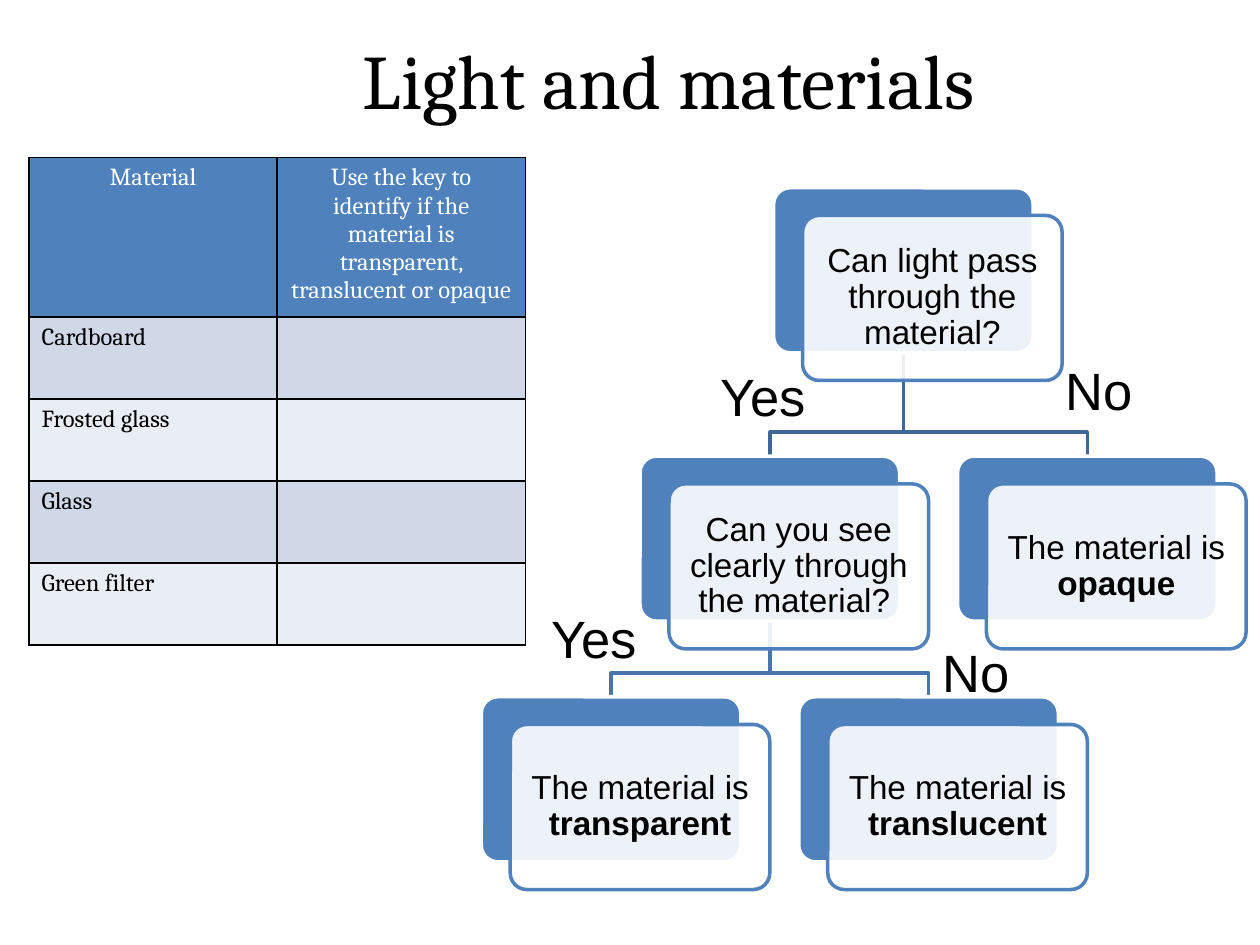
from dataclasses import dataclass

from lxml import etree
from pptx import Presentation
from pptx.dml.color import RGBColor
from pptx.enum.shapes import MSO_SHAPE
from pptx.enum.text import MSO_ANCHOR, PP_ALIGN
from pptx.oxml.ns import qn
from pptx.util import Emu, Pt

PX = 9144  # EMU in one px, 100 px to the inch

ROUNDED = MSO_SHAPE.ROUNDED_RECTANGLE
MIDDLE, TOP = MSO_ANCHOR.MIDDLE, MSO_ANCHOR.TOP
CENTER, LEFT = PP_ALIGN.CENTER, PP_ALIGN.LEFT

BLACK = RGBColor(0x00, 0x00, 0x00)
WHITE = RGBColor(0xFF, 0xFF, 0xFF)
BLUE = RGBColor(0x4F, 0x81, 0xBD)
UPPER_LINK = RGBColor(0x3F, 0x67, 0x97)
LOWER_LINK = RGBColor(0x48, 0x75, 0xAC)
DARK_BAND = RGBColor(0xD0, 0xD8, 0xE8)
LIGHT_BAND = RGBColor(0xE9, 0xED, 0xF4)

NODE_WIDTH, NODE_HEIGHT = 206, 131
CARD_DX, CARD_DY = 23, 22
CARD_PADDING = 4
BEND_RISE = 19  # height of a link's bend above the lower node


@dataclass(frozen=True)
class Node:
    left: int
    top: int
    text: str
    bold: str = ""


@dataclass(frozen=True)
class Link:
    parent: Node
    child: Node
    color: RGBColor


@dataclass(frozen=True)
class Answer:
    left: int
    top: int
    text: str


PASS = Node(614, 149, "Can light pass through the material?")
CLEAR = Node(508, 362, "Can you see clearly through the material? ")
TRANSPARENT = Node(382, 553, "The material is ", "transparent")
TRANSLUCENT = Node(634, 553, "The material is ", "translucent")
OPAQUE = Node(760, 362, "The material is ", "opaque")
NODES = [PASS, CLEAR, TRANSPARENT, TRANSLUCENT, OPAQUE]

LINKS = [
    Link(PASS, OPAQUE, UPPER_LINK),
    Link(CLEAR, TRANSLUCENT, LOWER_LINK),
    Link(CLEAR, TRANSPARENT, LOWER_LINK),
    Link(PASS, CLEAR, UPPER_LINK),
]
ANSWERS = [
    Answer(562, 284, "Yes"),
    Answer(836, 279, "No"),
    Answer(428, 476, "Yes"),
    Answer(738, 503, "No"),
]

HEADINGS = [
    "Material",
    "Use the key to identify if the material is transparent, translucent or opaque",
]
MATERIALS = ["Cardboard", "Frosted glass", "Glass", "Green filter"]


def px(*lengths: int) -> list[Emu]:
    return [Emu(length * PX) for length in lengths]


def add_run(para, text: str, font: str, size: int, color=BLACK, bold=False) -> None:
    span = para.add_run()
    span.text = text
    span.font.name = font
    span.font.size = Pt(size)
    span.font.color.rgb = color
    span.font.bold = bold


def add_text_box(page, left: int, top: int, width: int, height: int,
                 anchor=TOP, align=LEFT, insets=(10, 5)):
    """Add a wrapping text box and return its first paragraph."""
    frame = page.shapes.add_textbox(*px(left, top, width, height)).text_frame
    frame.word_wrap = True
    frame.vertical_anchor = anchor
    frame.margin_left = frame.margin_right = Emu(insets[0] * PX)
    frame.margin_top = frame.margin_bottom = Emu(insets[1] * PX)
    para = frame.paragraphs[0]
    para.alignment = align
    return para


def add_panel(page, left: int, top: int, fill: RGBColor, line: RGBColor):
    panel = page.shapes.add_shape(ROUNDED, *px(left, top, NODE_WIDTH, NODE_HEIGHT))
    panel.shadow.inherit = False
    panel.adjustments[0] = 0.1
    panel.fill.solid()
    panel.fill.fore_color.rgb = fill
    panel.line.color.rgb = line
    panel.line.width = Pt(2)
    return panel


def add_node(page, node: Node) -> None:
    add_panel(page, node.left, node.top, BLUE, WHITE)
    left, top = node.left + CARD_DX, node.top + CARD_DY
    card = add_panel(page, left, top, WHITE, BLUE)
    color = card.fill._xPr.find(qn("a:solidFill"))[0]
    etree.SubElement(color, qn("a:alpha"), val="90000")

    para = add_text_box(page, left + CARD_PADDING, top + CARD_PADDING,
                        NODE_WIDTH - 2 * CARD_PADDING, NODE_HEIGHT - 2 * CARD_PADDING,
                        MIDDLE, CENTER, (8, 8))
    para.line_spacing = 0.9
    add_run(para, node.text, "Arial", 19)
    if node.bold:
        add_run(para, node.bold, "Arial", 19, bold=True)


def add_link(page, link: Link) -> None:
    start_x = link.parent.left + NODE_WIDTH // 2
    end_x = link.child.left + NODE_WIDTH // 2
    end_y = link.child.top
    bend_y = end_y - BEND_RISE
    builder = page.shapes.build_freeform(start_x, link.parent.top + NODE_HEIGHT, scale=PX)
    builder.add_line_segments([(start_x, bend_y), (end_x, bend_y), (end_x, end_y)],
                              close=False)
    elbow = builder.convert_to_shape()
    elbow.shadow.inherit = False
    elbow.fill.background()
    elbow.line.color.rgb = link.color
    elbow.line.width = Pt(2)


def fill_cell(cell, text: str, fill: RGBColor, color=BLACK, align=LEFT) -> None:
    cell.fill.solid()
    cell.fill.fore_color.rgb = fill
    para = cell.text_frame.paragraphs[0]
    para.alignment = align
    if text:
        add_run(para, text, "Cambria", 14, color)
    # Borders go before the fill in the cell properties
    properties = cell._tc.get_or_add_tcPr()
    for index, side in enumerate(("lnL", "lnR", "lnT", "lnB")):
        border = etree.Element(qn(f"a:{side}"), w=str(Pt(1)))
        solid = etree.SubElement(border, qn("a:solidFill"))
        etree.SubElement(solid, qn("a:srgbClr"), val=str(BLACK))
        properties.insert(index, border)


def add_materials_table(page) -> None:
    rows = len(MATERIALS) + 1
    table = page.shapes.add_table(rows, 2, *px(23, 125, 394, 359)).table
    for column in table.columns:
        column.width = Emu(197 * PX)
    for index, row in enumerate(table.rows):
        row.height = Emu((65 if index else 99) * PX)
    for column, heading in enumerate(HEADINGS):
        fill_cell(table.cell(0, column), heading, BLUE, WHITE, CENTER)
    for row, material in enumerate(MATERIALS, start=1):
        band = DARK_BAND if row % 2 else LIGHT_BAND
        for column, text in enumerate((material, "")):
            fill_cell(table.cell(row, column), text, band)


def main() -> None:
    deck = Presentation()
    deck.slide_width, deck.slide_height = px(1000, 750)
    page = deck.slides.add_slide(deck.slide_layouts[6])

    # Decision key
    for link in LINKS:
        add_link(page, link)
    for node in NODES:
        add_node(page, node)

    # Title
    title = add_text_box(page, 105, 0, 852, 125, MIDDLE, CENTER, (10, 10))
    add_run(title, "Light and materials", "Cambria", 44)

    # Answers beside the links
    for answer in ANSWERS:
        para = add_text_box(page, answer.left, answer.top, 133, 61)
        add_run(para, answer.text, "Arial", 30)

    add_materials_table(page)
    deck.save("out.pptx")


if __name__ == "__main__":
    main()
